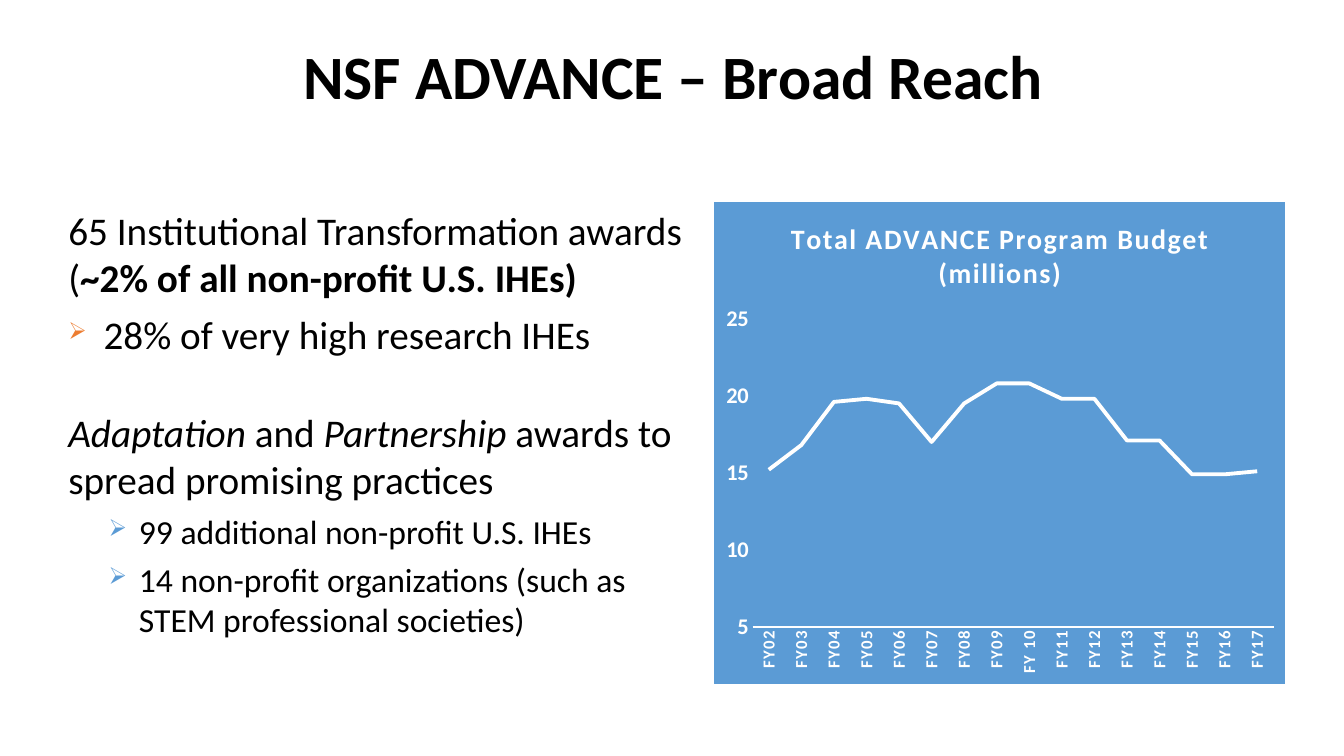
from lxml.etree import SubElement
from pptx import Presentation
from pptx.chart.data import CategoryChartData
from pptx.dml.color import RGBColor
from pptx.enum.chart import XL_CHART_TYPE as ChartType, XL_TICK_MARK as TickMark
from pptx.enum.text import MSO_ANCHOR as Anchor, PP_ALIGN as Align
from pptx.oxml import parse_xml
from pptx.oxml.ns import nsdecls, qn
from pptx.util import Inches, Pt

BLACK, WHITE, BLUE, ORANGE = "000000", "FFFFFF", "5B9BD5", "ED7D31"


def color(hex_text):
    return RGBColor.from_string(hex_text)


def write(paragraph, text, size=28, fill=BLACK, bold=False, italic=False, spacing=0):
    run = paragraph.add_run()
    run.text = text
    font = run.font
    font.name, font.size, font.bold, font.italic = "Calibri", Pt(size), bold, italic
    font.color.rgb = color(fill)
    if spacing:
        font._element.set("spc", str(spacing))


presentation = Presentation()
presentation.slide_width, presentation.slide_height = Inches(13.33), Inches(7.5)
slide = presentation.slides.add_slide(presentation.slide_layouts[5])

title = slide.shapes.title
title.left, title.top, title.width, title.height = map(Inches, (0.58, 0.25, 12.2, 1.08))
title.text_frame.vertical_anchor = Anchor.MIDDLE
heading = title.text_frame.paragraphs[0]
heading.alignment = Align.CENTER
heading.line_spacing = 0.9
write(heading, "NSF ADVANCE – Broad Reach", size=44, bold=True)

body = slide.shapes.add_textbox(*map(Inches, (0.58, 2, 6.34, 4.45))).text_frame
body.word_wrap = True

plain, bold, italic = {}, {"bold": True}, {"italic": True}
small = {"size": 24}
main_bullet = (0.35, 0.35, ORANGE, 60)
sub_bullet = (0.7, 0.3, BLUE, 70)
points = [
    (7, None, [("65 Institutional Transformation awards (", plain),
               ("~2% of all non-profit U.S. IHEs)", bold)]),
    (7, main_bullet, [("28% of very high research IHEs", plain)]),
    (36.5, None, [("Adaptation", italic), (" and ", plain), ("Partnership", italic),
                  (" awards to spread promising practices", plain)]),
    (5.5, sub_bullet, [("99 additional non-profit U.S. IHEs", small)]),
    (5.5, sub_bullet,
     [("14 non-profit organizations (such as STEM professional societies)", small)]),
]
for index, (space, bullet, runs) in enumerate(points):
    paragraph = body.add_paragraph() if index else body.paragraphs[0]
    paragraph.space_before = Pt(space)
    for text, style in runs:
        write(paragraph, text, **style)
    if bullet:
        margin, hanging, bullet_color, percent = bullet
        paragraph.level = int(bullet is sub_bullet)
        properties = paragraph._p.get_or_add_pPr()
        properties.set("marL", str(Inches(margin)))
        properties.set("indent", str(-Inches(hanging)))
        bullet_fill = SubElement(properties, qn("a:buClr"))
        SubElement(bullet_fill, qn("a:srgbClr"), val=bullet_color)
        SubElement(properties, qn("a:buSzPct"), val=str(percent * 1000))
        SubElement(properties, qn("a:buChar"), char="➢")

data = CategoryChartData()
data.categories = [f"FY {year}" if year == 10 else f"FY{year:02}" for year in range(2, 18)]
data.add_series("Series 1", [15.2, 16.8, 19.6, 19.8, 19.5, 17, 19.5, 20.8,
                             20.8, 19.8, 19.8, 17.1, 17.1, 14.9, 14.9, 15.1])
chart = slide.shapes.add_chart(
    ChartType.LINE, *map(Inches, (7.08, 2, 5.67, 4.79)), data).chart
chart.has_legend = False
chart.font.name, chart.font.size = "Calibri", Pt(10)
chart.font.color.rgb = color(BLACK)

chart.has_title = True
chart.chart_title.include_in_layout = False
title_frame = chart.chart_title.text_frame
for index, line in enumerate(("Total ADVANCE Program Budget", "(millions)")):
    paragraph = title_frame.add_paragraph() if index else title_frame.paragraphs[0]
    write(paragraph, line, size=20, fill=WHITE, bold=True, spacing=100)

budget = chart.plots[0].series[0]
budget.smooth = False
budget.format.line.color.rgb = color(WHITE)
budget.format.line.width = Pt(2.75)
chart.plots[0].vary_by_categories = False

years, millions = chart.category_axis, chart.value_axis
for axis, size in ((years, 12), (millions, 16)):
    axis.has_major_gridlines = False
    axis.major_tick_mark = axis.minor_tick_mark = TickMark.NONE
    font = axis.tick_labels.font
    font.name, font.size, font.bold = "Calibri", Pt(size), True
    font.color.rgb = color(WHITE)

years.tick_labels.font._element.set("spc", "100")
years._element.find(qn("c:txPr")).find(qn("a:bodyPr")).set("rot", "-5400000")
years.format.line.color.rgb = color(WHITE)
years.format.line.width = Pt(1)
millions.format.line.fill.background()
millions.minimum_scale, millions.maximum_scale, millions.major_unit = 5, 25, 5
millions.tick_labels.number_format = "#,##0;\\-#,##0"
millions.tick_labels.number_format_is_linked = False

chart_element = chart._chartSpace.find(qn("c:chart"))
solid = f'<a:solidFill><a:srgbClr val="{BLUE}"/></a:solidFill>'
chart_element.addnext(parse_xml(
    f'<c:spPr {nsdecls("c", "a")}>{solid}<a:ln w="{Pt(0.75)}">{solid}</a:ln></c:spPr>'))

plot_area = chart_element.find(qn("c:plotArea"))
for old_layout in plot_area.findall(qn("c:layout")):
    plot_area.remove(old_layout)
layout = parse_xml(f'<c:layout {nsdecls("c")}/>')
manual = SubElement(layout, qn("c:manualLayout"))
for tag, value in (("layoutTarget", "inner"), ("xMode", "edge"), ("yMode", "edge"),
                   ("x", "0.067"), ("y", "0.242"), ("w", "0.913"), ("h", "0.64")):
    SubElement(manual, qn(f"c:{tag}"), val=value)
plot_area.insert(0, layout)

presentation.save("out.pptx")
